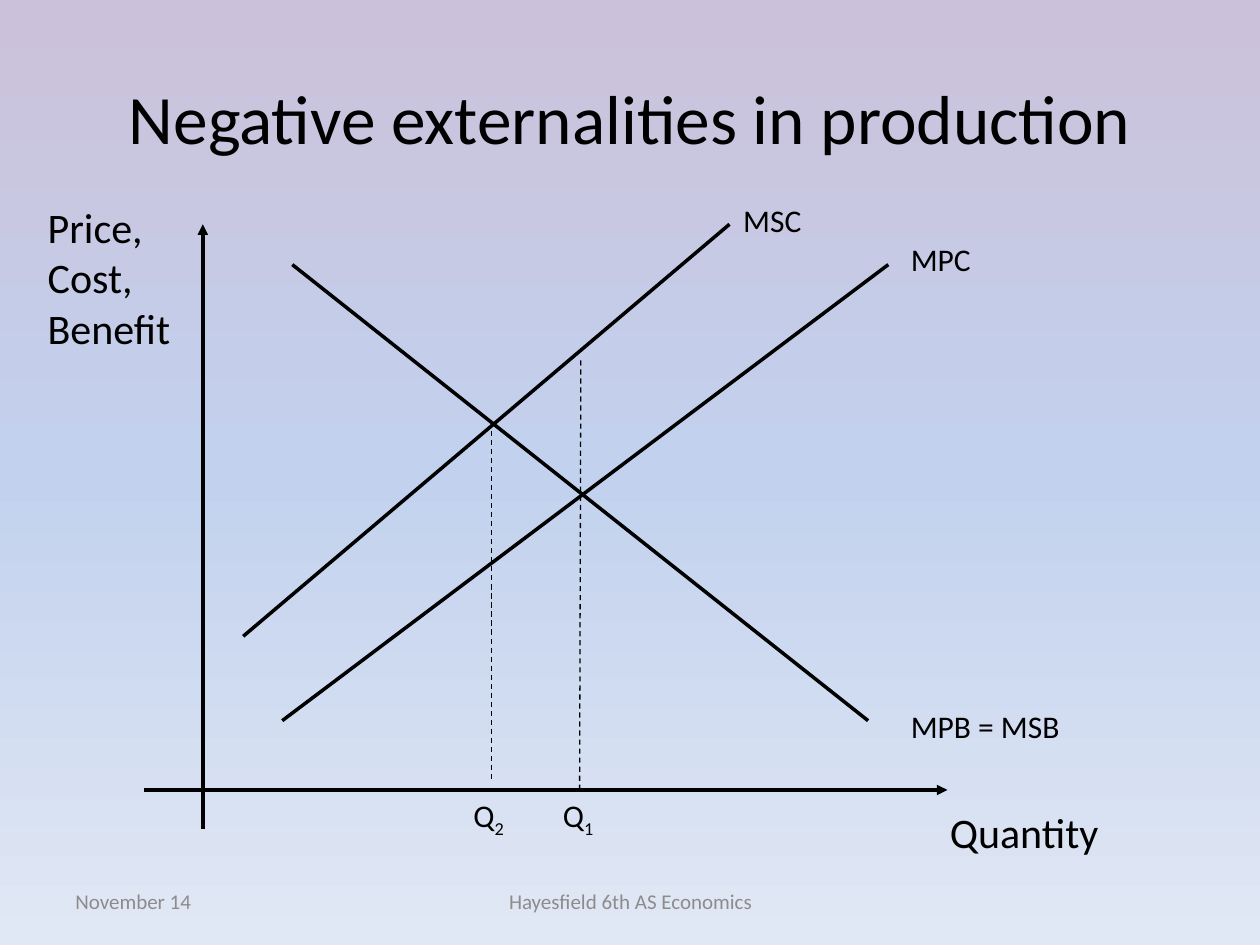
from copy import deepcopy

from pptx import Presentation
from pptx.dml.color import RGBColor
from pptx.enum.dml import MSO_LINE
from pptx.enum.shapes import MSO_CONNECTOR
from pptx.enum.text import MSO_ANCHOR, MSO_AUTO_SIZE, PP_ALIGN
from pptx.oxml.ns import qn
from pptx.oxml.xmlchemy import OxmlElement
from pptx.util import Inches, Pt

BLACK = RGBColor(0x00, 0x00, 0x00)
GREY = RGBColor(0x8C, 0x8C, 0x8C)
LILAC = RGBColor(0xCC, 0xC1, 0xDA)
SKY = RGBColor(0xC2, 0xD1, 0xED)
MIST = RGBColor(0xE1, 0xE8, 0xF5)

LEFT, CENTER = PP_ALIGN.LEFT, PP_ALIGN.CENTER
TOP, MIDDLE = MSO_ANCHOR.TOP, MSO_ANCHOR.MIDDLE
NO_FIT, GROW = MSO_AUTO_SIZE.NONE, MSO_AUTO_SIZE.SHAPE_TO_FIT_TEXT
STRAIGHT = MSO_CONNECTOR.STRAIGHT
DASH = MSO_LINE.DASH
TITLE_ONLY = 5


def write_text(frame, text, size=18, color=BLACK, align=LEFT, anchor=TOP,
               wrap=True, fit=NO_FIT, font="Calibri", subscript=""):
    frame.word_wrap = wrap
    frame.auto_size = fit
    frame.vertical_anchor = anchor
    paragraph = frame.paragraphs[0]
    paragraph.alignment = align
    for part in filter(None, (text, subscript)):
        run = paragraph.add_run()
        run.text = part
        run.font.name = font
        run.font.size = Pt(size)
        run.font.color.rgb = color
    if subscript:
        run.font._element.set("baseline", "-25000")


class DiagramSlide:
    def __init__(self, presentation):
        self.slide = presentation.slides.add_slide(
            presentation.slide_layouts[TITLE_ONLY])

    def background(self, *colors):
        """Fill the slide from top to bottom with evenly spaced colours."""
        fill = self.slide.background.fill
        fill.gradient()
        fill.gradient_angle = 270
        stop_list = next(self.slide.element.iter(qn("a:gsLst")))
        while len(stop_list) < len(colors):
            stop_list.append(deepcopy(stop_list[0]))
        for i, (stop, color) in enumerate(zip(fill.gradient_stops, colors)):
            stop.position = i / (len(colors) - 1)
            stop.color.rgb = color

    def title(self, text, left, top, width, height):
        heading = self.slide.shapes.title
        heading.left, heading.top = Inches(left), Inches(top)
        heading.width, heading.height = Inches(width), Inches(height)
        write_text(heading.text_frame, text, size=39.6, align=CENTER,
                   anchor=MIDDLE)

    def text(self, text, left, top, width, height, **text_format):
        box = self.slide.shapes.add_textbox(
            Inches(left), Inches(top), Inches(width), Inches(height))
        write_text(box.text_frame, text, **text_format)

    def line(self, start, end, width=2, dash=None, arrow=None):
        """Draw a line; arrow is "headEnd" (start) or "tailEnd" (end)."""
        connector = self.slide.shapes.add_connector(
            STRAIGHT, *(Inches(v) for v in (*start, *end)))
        connector.line.color.rgb = BLACK
        connector.line.width = Pt(width)
        if dash:
            connector.line.dash_style = dash
        if arrow:
            arrowhead = OxmlElement(f"a:{arrow}")
            arrowhead.set("type", "triangle")
            connector.line._get_or_add_ln().append(arrowhead)
        connector.element.spPr.append(OxmlElement("a:effectLst"))


def main():
    presentation = Presentation()
    presentation.slide_width = Inches(10)
    presentation.slide_height = Inches(7.5)

    diagram = DiagramSlide(presentation)
    diagram.background(LILAC, SKY, MIST)
    diagram.title("Negative externalities in production", 0.5, 0.3, 9, 1.25)

    # Footer
    footer = dict(size=12, color=GREY, anchor=MIDDLE)
    diagram.text("November 14", 0.5, 6.95, 2.33, 0.4, **footer)
    diagram.text("Hayesfield 6th AS Economics", 3.42, 6.95, 3.17, 0.4,
                 align=CENTER, **footer)

    # Axes
    axis_y = 6.27
    diagram.line((1.61, 1.78), (1.61, 6.58), arrow="headEnd")
    diagram.line((1.14, axis_y), (7.52, axis_y), arrow="tailEnd")
    diagram.text("Price, Cost, Benefit", 0.28, 1.55, 1.18, 1.31,
                 size=24, fit=GROW)
    diagram.text("Quantity", 7.44, 6.35, 1.5, 0.5, size=24, fit=GROW)

    # Cost and benefit curves: start, end, label, label left, top, width
    label = dict(wrap=False, fit=GROW)
    curves = [
        ((7.05, 2.1), (2.24, 5.72), "MPC", 7.13, 1.86, 0.68),
        ((2.32, 2.1), (6.89, 5.72), "MPB = MSB", 7.13, 5.56, 1.39),
        ((5.79, 1.78), (1.93, 5.05), "MSC", 5.8, 1.55, 0.67),
    ]
    for start, end, name, left, top, width in curves:
        diagram.line(start, end)
        diagram.text(name, left, top, width, 0.4, **label)

    # Output levels: dashed drop line and its label on the quantity axis
    outputs = [
        ("1", (4.61, 2.86), (4.6, axis_y), 4.37),
        ("2", (3.9, 3.42), (3.9, 6.19), 3.66),
    ]
    for number, start, end, left in outputs:
        diagram.line(start, end, width=0.75, dash=DASH)
        diagram.text("Q", left, axis_y, 0.46, 0.4, subscript=number, **label)

    presentation.save("out.pptx")


if __name__ == "__main__":
    main()
